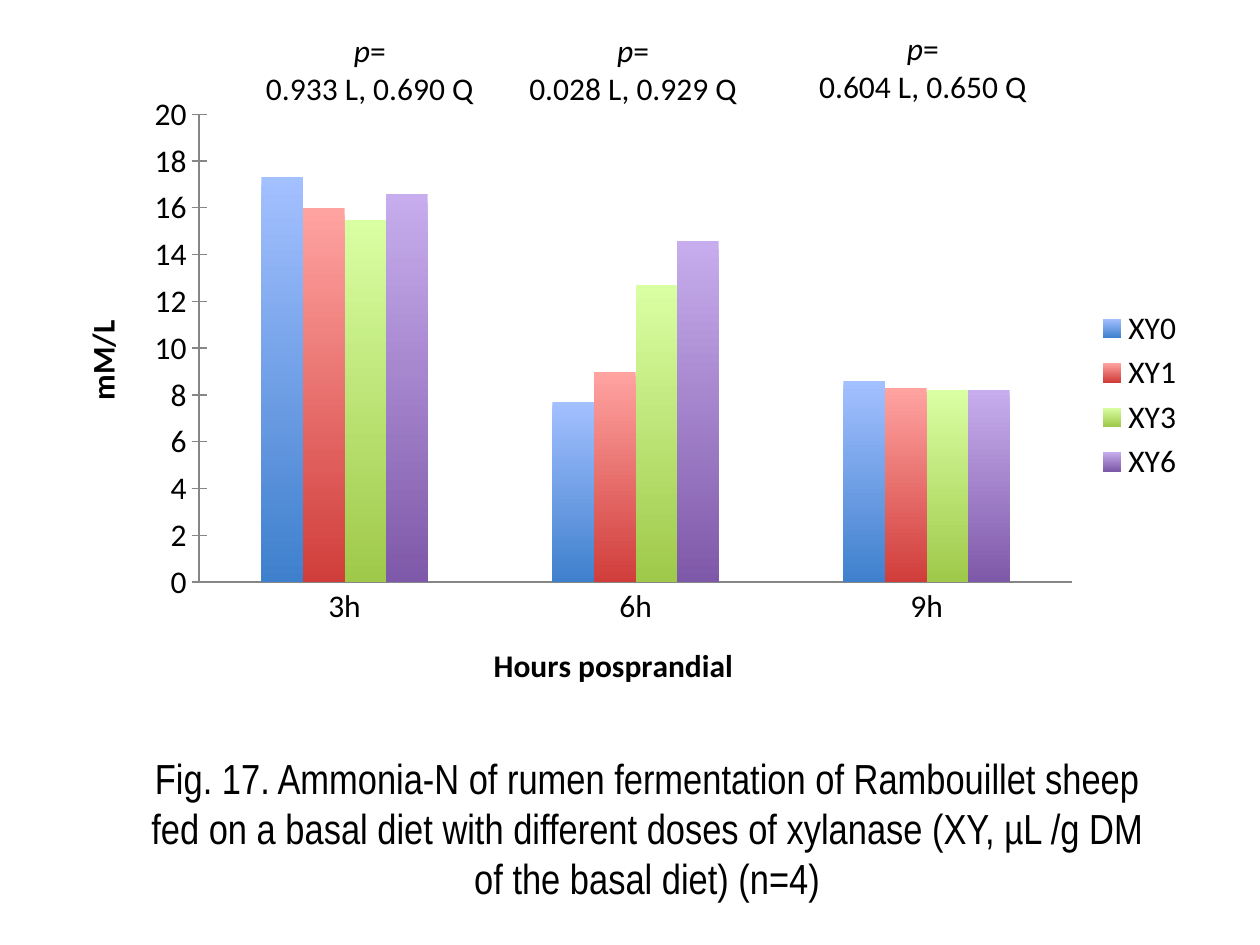
from lxml import etree
from pptx import Presentation
from pptx.chart.data import CategoryChartData
from pptx.dml.color import RGBColor
from pptx.enum.chart import XL_CHART_TYPE, XL_LEGEND_POSITION, XL_TICK_MARK
from pptx.enum.text import MSO_AUTO_SIZE, PP_ALIGN
from pptx.oxml.ns import qn
from pptx.util import Inches, Pt

CLUSTERED = XL_CHART_TYPE.COLUMN_CLUSTERED
LEGEND_RIGHT = XL_LEGEND_POSITION.RIGHT
TICK_NONE, TICK_CROSS = XL_TICK_MARK.NONE, XL_TICK_MARK.CROSS
CENTER = PP_ALIGN.CENTER
GROW = MSO_AUTO_SIZE.SHAPE_TO_FIT_TEXT

COLORS = {"text": "000000", "axis": "868686"}
HOURS = ["3h", "6h", "9h"]
DOSES = [
    ("XY0", [17.3, 7.7, 8.6], ("A3C0FF", "3F80CD")),
    ("XY1", [16, 9, 8.3], ("FFA3A1", "D03E3B")),
    ("XY3", [15.5, 12.7, 8.2], ("D9FFA3", "9FC94A")),
    ("XY6", [16.6, 14.6, 8.2], ("C7ADED", "7F59A9")),
]
PLOT_AREA = {"x": 0.12, "y": 0.05, "w": 0.77, "h": 0.75}
CAPTION = (
    "Fig. 17. Ammonia-N of rumen fermentation of Rambouillet sheep "
    "fed on a basal diet with different doses of xylanase "
    "(XY, µL /g DM of the basal diet) (n=4)"
)
P_VALUES = [
    (3.56, 0.2, "0.028 L, 0.929 Q"),
    (5.86, 0.18, "0.604 L, 0.650 Q"),
    (1.47, 0.2, "0.933 L, 0.690 Q"),
]


def format_font(font, **values):
    values = {"name": "Calibri", "size": Pt(18), **values}
    for attribute, value in values.items():
        setattr(font, attribute, value)
    font.color.rgb = RGBColor.from_string(COLORS["text"])


def add_text(slide, left, top, width, height, paragraphs, **font_values):
    shape = slide.shapes.add_textbox(
        Inches(left), Inches(top), Inches(width), Inches(height))
    frame = shape.text_frame
    frame.word_wrap = True
    frame.auto_size = GROW
    for index, runs in enumerate(paragraphs):
        paragraph = frame.add_paragraph() if index else frame.paragraphs[0]
        paragraph.alignment = CENTER
        for text, italic in runs:
            run = paragraph.add_run()
            run.text = text
            format_font(run.font, italic=italic, **font_values)


def format_axis(axis, title, tick_mark):
    axis.has_major_gridlines = False
    axis.major_tick_mark = tick_mark
    axis.minor_tick_mark = TICK_NONE
    axis.format.line.color.rgb = RGBColor.from_string(COLORS["axis"])
    axis.format.line.width = Pt(0.75)
    format_font(axis.tick_labels.font)
    frame = axis.axis_title.text_frame
    frame.text = title
    format_font(frame.paragraphs[0].runs[0].font, bold=True)
    return frame


def place_plot_area(chart):
    plot_area = chart._chartSpace.chart.plotArea
    for old_layout in plot_area.findall(qn("c:layout")):
        plot_area.remove(old_layout)
    layout = etree.Element(qn("c:layout"))
    plot_area.insert(0, layout)
    manual = etree.SubElement(layout, qn("c:manualLayout"))
    settings = {"layoutTarget": "inner", "xMode": "edge", "yMode": "edge", **PLOT_AREA}
    for tag, value in settings.items():
        etree.SubElement(manual, qn(f"c:{tag}")).set("val", str(value))


def add_ammonia_chart(slide):
    data = CategoryChartData()
    data.categories = HOURS
    for name, values, _ in DOSES:
        data.add_series(name, values)
    chart = slide.shapes.add_chart(
        CLUSTERED, Inches(0.5), Inches(0.66), Inches(9), Inches(4.95), data).chart
    format_font(chart.font)
    chart.has_title = False
    chart.has_legend = True
    chart.legend.position = LEGEND_RIGHT
    chart.legend.include_in_layout = False
    format_font(chart.legend.font)

    plot = chart.plots[0]
    plot.gap_width = 300
    plot.overlap = 0
    plot.vary_by_categories = False
    for series, (_, _, gradient) in zip(plot.series, DOSES):
        fill = series.format.fill
        fill.gradient()
        fill.gradient_angle = 270
        for stop, color in zip(fill.gradient_stops, gradient):
            stop.color.rgb = RGBColor.from_string(color)

    format_axis(chart.category_axis, "Hours posprandial", TICK_NONE)
    value_axis = chart.value_axis
    value_title = format_axis(value_axis, "mM/L", TICK_CROSS)
    value_title._txBody.bodyPr.set("rot", "-5400000")
    value_axis.minimum_scale = 0
    value_axis.maximum_scale = 20
    value_axis.major_unit = 2
    value_axis.tick_labels.number_format = "General"
    value_axis.tick_labels.number_format_is_linked = False
    place_plot_area(chart)


def main():
    presentation = Presentation()
    presentation.slide_width = Inches(10)
    presentation.slide_height = Inches(7.5)
    slide = presentation.slides.add_slide(presentation.slide_layouts[6])
    add_ammonia_chart(slide)
    add_text(slide, 0.97, 5.92, 8.33, 1.31, [[(CAPTION, False)]],
             name="Arial Narrow", size=Pt(24))
    for left, top, values in P_VALUES:
        add_text(slide, left, top, 2.93, 0.71,
                 [[("p", True), ("=", False)], [(values, False)]])
    presentation.save("out.pptx")


if __name__ == "__main__":
    main()
